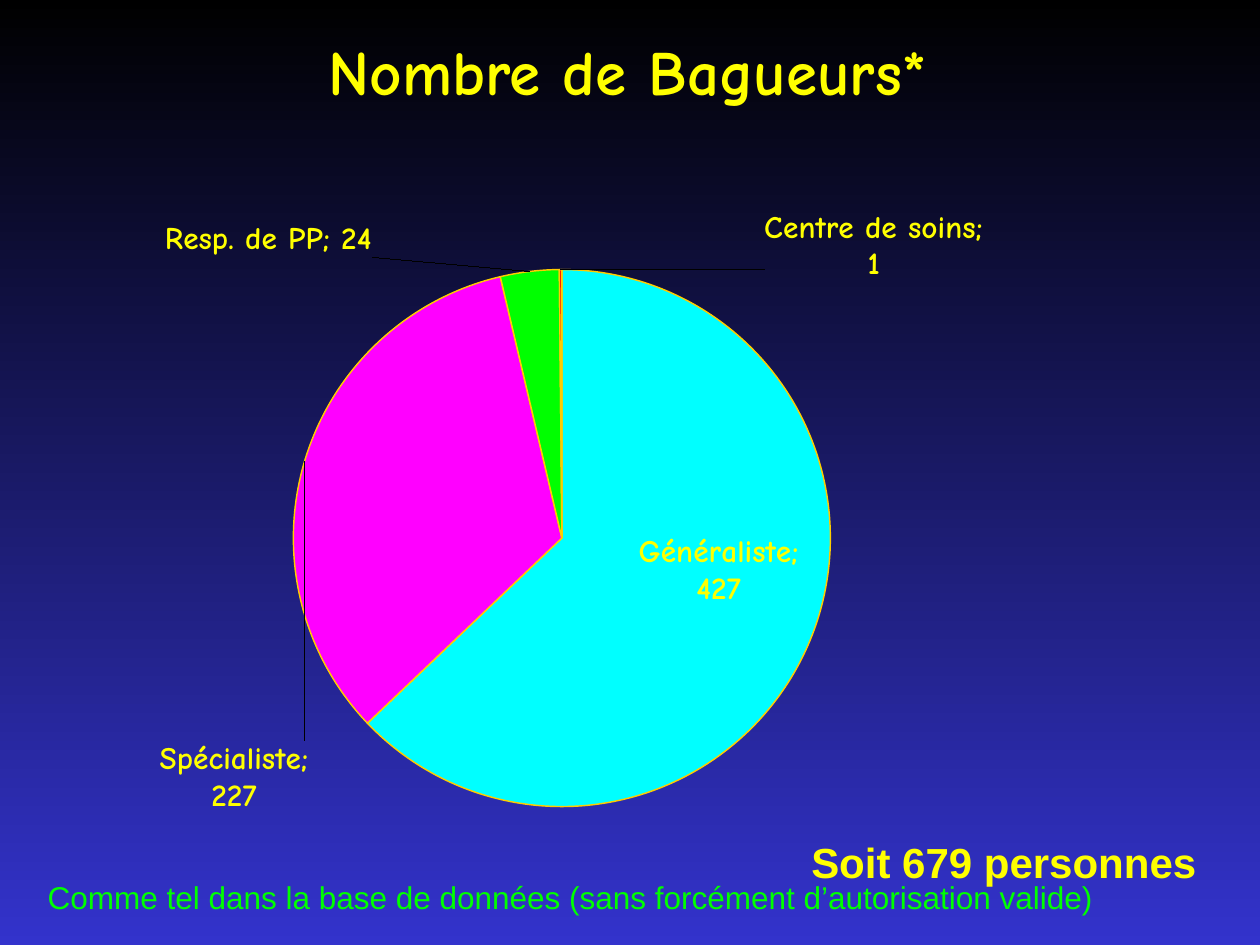
from dataclasses import dataclass

from lxml import etree
from pptx import Presentation
from pptx.chart.data import CategoryChartData
from pptx.dml.color import RGBColor
from pptx.enum.chart import XL_CHART_TYPE, XL_LABEL_POSITION
from pptx.enum.text import MSO_ANCHOR, PP_ALIGN
from pptx.oxml import parse_xml
from pptx.oxml.ns import nsdecls, qn
from pptx.util import Inches, Pt


@dataclass(frozen=True)
class Theme:
    top: str = "000000"
    bottom: str = "3333CC"
    yellow: str = "FFFF00"
    green: str = "00FF00"
    outline: str = "FFCC00"
    display: str = "Comic Neue"
    body: str = "Arial"
    title_size: float = 36
    total_size: float = 24
    note_size: float = 18
    label_size: float = 17.9


theme = Theme()


def format_font(font, *, size, color, name, bold=False):
    font.size = Pt(size)
    font.color.rgb = RGBColor.from_string(color)
    font.name = name
    font.bold = bold


def add_text(page, text, *, place, wrap=False, align=PP_ALIGN.LEFT, **style):
    box = page.shapes.add_textbox(*(Inches(value) for value in place))
    frame = box.text_frame
    frame.word_wrap = wrap
    frame.vertical_anchor = MSO_ANCHOR.TOP
    para = frame.paragraphs[0]
    para.alignment = align
    span = para.add_run()
    span.text = text
    format_font(span.font, **style)
    return span


deck = Presentation()
deck.slide_width = Inches(10)
deck.slide_height = Inches(7.5)
page = deck.slides.add_slide(deck.slide_layouts[6])

backdrop = page.background.fill
backdrop.gradient()
backdrop.gradient_angle = 270
for stop, color, position in zip(backdrop.gradient_stops, (theme.top, theme.bottom), (0, 1)):
    stop.color.rgb = RGBColor.from_string(color)
    stop.position = position

title = add_text(page, "Nombre de Bagueurs*", place=(0.73, 0.21, 8.5, 1.25), wrap=True,
                 align=PP_ALIGN.CENTER, size=theme.title_size, color=theme.yellow,
                 name=theme.display, bold=True)
title.font.fill._xPr.find(qn("a:solidFill")).addnext(parse_xml(
    f'<a:effectLst {nsdecls("a")}><a:outerShdw dist="38100" dir="2700000">'
    f'<a:srgbClr val="{theme.top}"/></a:outerShdw></a:effectLst>'))

ringers = [
    ("Généraliste", 427, "00FFFF", XL_LABEL_POSITION.CENTER, (0.03, -0.03)),
    ("Spécialiste", 227, "FF00FF", XL_LABEL_POSITION.OUTSIDE_END, (0.01, 0.52)),
    ("Resp. de PP", 24, theme.green, XL_LABEL_POSITION.OUTSIDE_END, (-0.14, -0.01)),
    ("Centre de soins", 1, "FF0000", XL_LABEL_POSITION.OUTSIDE_END, (0.28, 0.03)),
]
data = CategoryChartData()
data.categories = [ringer[0] for ringer in ringers]
data.add_series("Series 1", [ringer[1] for ringer in ringers])
chart = page.shapes.add_chart(XL_CHART_TYPE.PIE, Inches(0.73), Inches(1.48),
                              Inches(8.88), Inches(5.42), data).chart
chart.has_legend = False
chart.has_title = False
label_style = dict(size=theme.label_size, color=theme.yellow, name=theme.display, bold=True)
format_font(chart.font, **label_style)
plot = chart.plots[0]
plot.vary_by_categories = True
series = plot.series[0]
labels = series.data_labels
labels.show_value = True
labels.show_category_name = True
format_font(labels.font, **label_style)

for index, (name, count, color, position, shift) in enumerate(ringers):
    point = series.points[index]
    point.format.fill.solid()
    point.format.fill.fore_color.rgb = RGBColor.from_string(color)
    point.format.line.color.rgb = RGBColor.from_string(theme.outline)
    point.format.line.width = Pt(0.82)
    label = point.data_label
    label.position = position
    format_font(label.font, **label_style)
    node = chart.element.xpath(f'.//c:dLbl[c:idx/@val="{index}"]')[0]
    for old in node.findall(qn("c:layout")):
        node.remove(old)
    node.find(qn("c:idx")).addnext(parse_xml(
        f'<c:layout {nsdecls("c")}><c:manualLayout><c:x val="{shift[0]}"/>'
        f'<c:y val="{shift[1]}"/></c:manualLayout></c:layout>'))
    node.find(qn("c:showCatName")).set("val", "1")

for bubble in chart.element.xpath(".//c:ser//c:showBubbleSize"):
    separator = etree.Element(qn("c:separator"))
    separator.text = "; "
    bubble.addnext(separator)
for leader in chart.element.xpath(".//c:ser//c:showLeaderLines"):
    leader.set("val", "1")

plot_area = chart.element.xpath(".//c:plotArea")[0]
for old in plot_area.findall(qn("c:layout")):
    plot_area.remove(old)
plot_area.insert(0, parse_xml(
    f'<c:layout {nsdecls("c")}><c:manualLayout><c:layoutTarget val="inner"/>'
    '<c:xMode val="edge"/><c:yMode val="edge"/><c:x val="0.18"/><c:y val="0.12"/>'
    '<c:w val="0.48"/><c:h val="0.79"/></c:manualLayout></c:layout>'))

add_text(page, "Soit 679 personnes", place=(6.34, 6.59, 3.29, 0.5),
         size=theme.total_size, color=theme.yellow, name=theme.body, bold=True)
add_text(page, "Comme tel dans la base de données (sans forcément d’autorisation valide)",
         place=(0.28, 6.92, 8.57, 0.4), size=theme.note_size, color=theme.green, name=theme.body)

deck.save("out.pptx")
